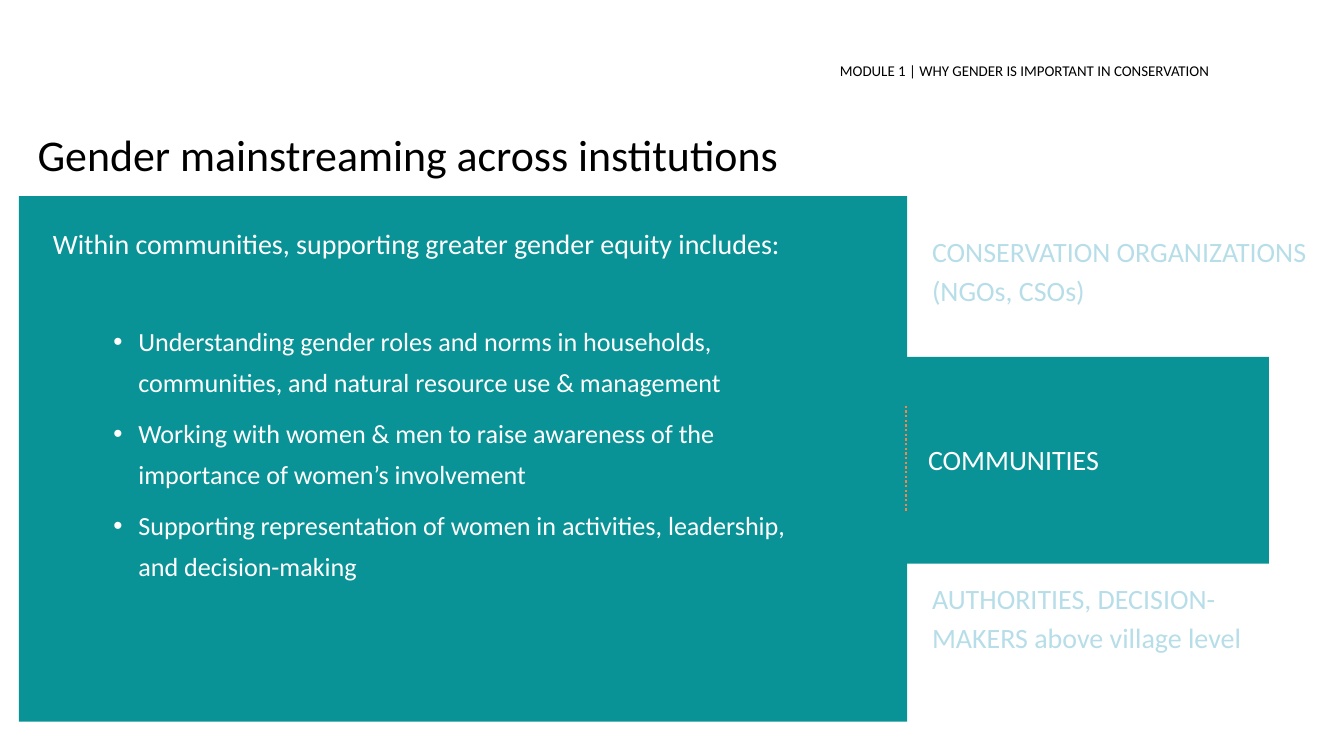
from lxml.etree import SubElement
from pptx import Presentation
from pptx.dml.color import RGBColor
from pptx.enum.dml import MSO_LINE_DASH_STYLE as Dash
from pptx.enum.shapes import MSO_CONNECTOR as Connector, MSO_SHAPE as Shape
from pptx.enum.text import MSO_ANCHOR as Anchor, MSO_AUTO_SIZE as AutoSize, PP_ALIGN as Align
from pptx.oxml.ns import qn
from pptx.util import Cm, Pt

COLORS = {
    "teal": "0A9396",
    "orange": "F9844A",
    "pale": "B7DEE8",
    "white": "FFFFFF",
    "black": "000000",
}


class SlideBuilder:
    font = "Calibri"

    def __init__(self, slide):
        self.slide = slide

    def color(self, name):
        return RGBColor.from_string(COLORS[name])

    def block(self, box, color):
        block = self.slide.shapes.add_shape(Shape.RECTANGLE, *map(Cm, box))
        block.shadow.inherit = False
        block.fill.solid()
        block.fill.fore_color.rgb = self.color(color)
        block.line.fill.background()

    def fill_frame(self, frame, lines, size, color, spacing, after=0, indent=0, hanging=0,
                   level=0, inset=(0, 0)):
        frame.word_wrap = True
        frame.auto_size = AutoSize.NONE
        frame.vertical_anchor = Anchor.TOP
        frame.margin_left = frame.margin_right = Cm(inset[0])
        frame.margin_top = frame.margin_bottom = Cm(inset[1])
        for i, line in enumerate(lines):
            paragraph = frame.add_paragraph() if i else frame.paragraphs[0]
            paragraph.alignment = Align.LEFT
            paragraph.level = level
            paragraph.line_spacing = Pt(spacing)
            paragraph.space_before = Pt(0)
            paragraph.space_after = Pt(after)
            props = paragraph._p.get_or_add_pPr()
            props.set("marL", str(Cm(indent)))
            props.set("indent", str(-Cm(hanging)))
            if hanging:
                SubElement(props, qn("a:buFont"), typeface="Arial")
                SubElement(props, qn("a:buChar"), char="•")
            run = paragraph.add_run()
            run.text = line
            run.font.name = self.font
            run.font.size = Pt(size)
            run.font.color.rgb = self.color(color)

    def title(self, box, text, size, color, spacing):
        title = self.slide.shapes.title
        title.left, title.top, title.width, title.height = map(Cm, box)
        self.fill_frame(title.text_frame, [text], size, color, spacing)

    def text(self, box, lines, size, color, spacing, **layout):
        frame = self.slide.shapes.add_textbox(*map(Cm, box)).text_frame
        self.fill_frame(frame, lines, size, color, spacing, **layout)

    def dotted_line(self, ends, color, width):
        line = self.slide.shapes.add_connector(Connector.STRAIGHT, *map(Cm, ends))
        line.line.color.rgb = self.color(color)
        line.line.width = Pt(width)
        line.line.dash_style = Dash.ROUND_DOT
        SubElement(line._element.spPr, qn("a:effectLst"))


def main():
    deck = Presentation()
    deck.slide_width, deck.slide_height = Cm(50.8), Cm(28.58)
    builder = SlideBuilder(deck.slides.add_slide(deck.slide_layouts[5]))

    # Title and module heading
    builder.title((1.42, 4.83, 37.24, 1.96),
                  "Gender mainstreaming across institutions", 47, "black", 56.4)
    builder.text((31.75, 2.21, 18.26, 0.76),
                 ["MODULE 1 | WHY GENDER IS IMPORTANT IN CONSERVATION"], 16, "black", 22.4)

    # Main panel joined to the highlighted institution
    builder.block((19.66, 13.49, 28.3, 7.82), "teal")
    builder.block((0.71, 7.42, 33.58, 19.86), "teal")

    # Ways of supporting gender equity
    builder.text((0.91, 8.31, 32.11, 3),
                 ["Within communities, supporting greater gender equity includes:"],
                 30, "white", 39.2, indent=0.84, level=1, inset=(0.25, 0.13))
    practices = [
        "Understanding gender roles and norms in households, communities, "
        "and natural resource use & management",
        "Working with women & men to raise awareness of the importance of women’s involvement",
        "Supporting representation of women in activities, leadership, and decision-making",
    ]
    builder.text((3.38, 11.96, 26.7, 13.44), practices, 28, "white", 43.4,
                 after=12, indent=1.85, hanging=0.94, level=1)

    # Institutions, with communities highlighted
    institutions = [
        ((35.23, 8.66, 15.57, 4.42), ["CONSERVATION ORGANIZATIONS", "(NGOs, CSOs)"], "pale"),
        ((35.08, 16.51, 12.7, 1.45), ["COMMUNITIES"], "white"),
        ((35.23, 21.77, 12.7, 4.42),
         ["AUTHORITIES, DECISION-MAKERS above village level"], "pale"),
    ]
    for box, lines, color in institutions:
        builder.text(box, lines, 30, color, 42)
    builder.dotted_line((34.24, 15.34, 34.24, 19.35), "orange", 2.5)

    deck.save("out.pptx")


if __name__ == "__main__":
    main()
